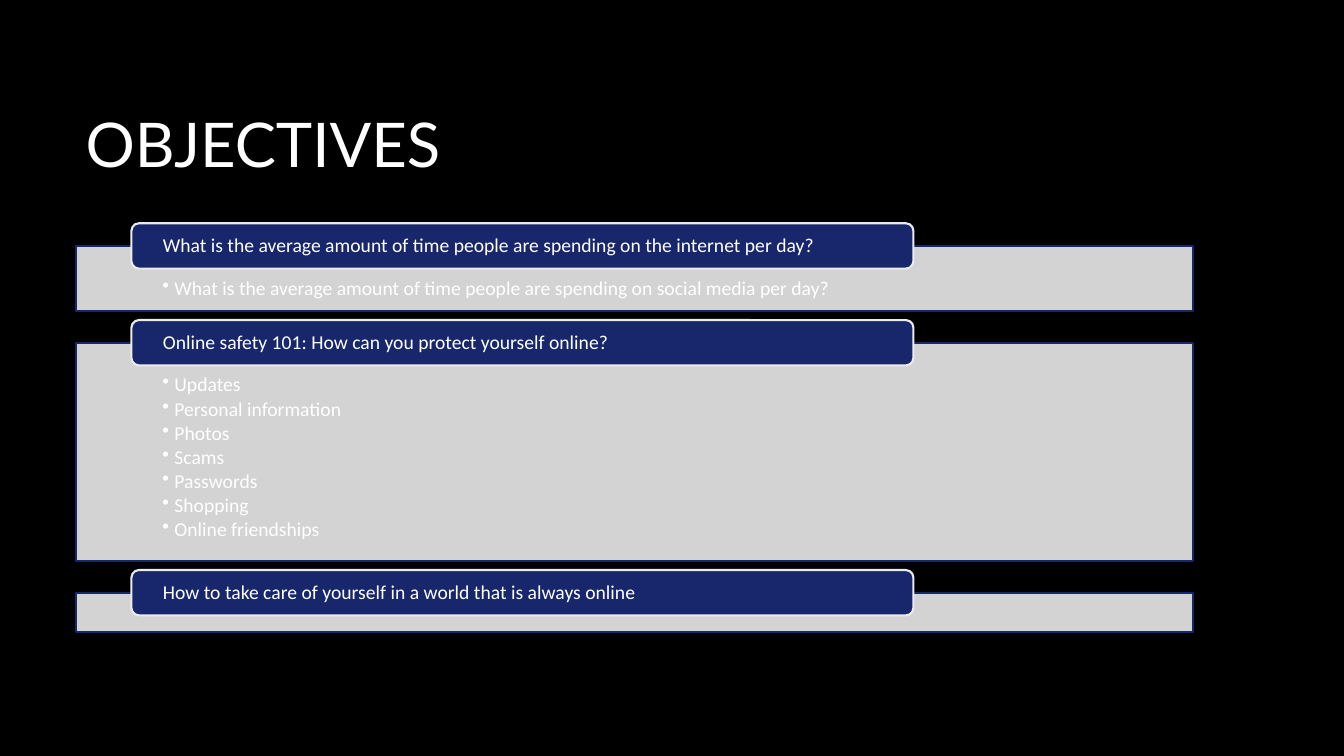
import pptx
import pptx.util
import pptx.dml.color
import pptx.enum.shapes
import pptx.enum.text
import pptx.oxml.ns
import lxml.etree

Inches = pptx.util.Inches
Pt = pptx.util.Pt
SHAPES = pptx.enum.shapes.MSO_SHAPE
ANCHORS = pptx.enum.text.MSO_ANCHOR
ALIGNMENTS = pptx.enum.text.PP_ALIGN
qn = pptx.oxml.ns.qn

COLORS = {"black": "000000", "white": "FFFFFF", "navy": "18276C", "light": "EBEBEB"}
SLIDE_WIDTH, SLIDE_HEIGHT = 13.33, 7.5
LEFT, WIDTH = 0.75, 11.08
LABEL_INDENT, LABEL_WIDTH, LABEL_HEIGHT = 0.05 * WIDTH, 0.7 * WIDTH, 0.45
LABEL_RISE = LABEL_HEIGHT / 2
FIRST_TOP, GAP = 2.44, 0.31

OBJECTIVES = [
    ("What is the average amount of time people are spending on the internet per day?", 0.65,
     ["What is the average amount of time people are spending on social media per day?"]),
    ("Online safety 101: How can you protect yourself online?", 2.17,
     ["Updates", "Personal information", "Photos", "Scams", "Passwords", "Shopping",
      "Online friendships"]),
    ("How to take care of yourself in a world that is always online", 0.39, []),
]


def add_box(kind, left, top, width, height, fill, line, margins, anchor):
    shape = slide.shapes.add_shape(kind, Inches(left), Inches(top), Inches(width), Inches(height))
    shape.shadow.inherit = False
    shape.fill.solid()
    shape.fill.fore_color.rgb = pptx.dml.color.RGBColor.from_string(COLORS[fill])
    shape.line.color.rgb = pptx.dml.color.RGBColor.from_string(COLORS[line])
    shape.line.width = Pt(1.5)
    frame = shape.text_frame
    frame.word_wrap = True
    frame.vertical_anchor = anchor
    frame.margin_left, frame.margin_top, frame.margin_right, frame.margin_bottom = map(Inches, margins)
    return shape


def write(paragraph, text, font_name, size):
    paragraph.text = text
    paragraph.alignment = ALIGNMENTS.LEFT
    paragraph.line_spacing = 0.9
    paragraph.font.name = font_name
    paragraph.font.size = Pt(size)
    paragraph.font.color.rgb = pptx.dml.color.RGBColor.from_string(COLORS["white"])


presentation = pptx.Presentation()
presentation.slide_width = Inches(SLIDE_WIDTH)
presentation.slide_height = Inches(SLIDE_HEIGHT)
slide = presentation.slides.add_slide(presentation.slide_layouts[6])
slide.background.fill.solid()
slide.background.fill.fore_color.rgb = pptx.dml.color.RGBColor.from_string(COLORS["black"])

title = slide.shapes.add_textbox(Inches(LEFT), Inches(0.67), Inches(WIDTH), Inches(1.59))
title.text_frame.word_wrap = True
title.text_frame.vertical_anchor = ANCHORS.MIDDLE
write(title.text_frame.paragraphs[0], "OBJECTIVES", "Lato", 44)

top = FIRST_TOP
for heading, height, points in OBJECTIVES:
    panel = add_box(SHAPES.RECTANGLE, LEFT, top, WIDTH, height, "light", "navy",
                    (0.86, 0.32, 0.86, 0.11), ANCHORS.TOP)
    fill_color = panel.fill._xPr.find(qn("a:solidFill"))[0]
    lxml.etree.SubElement(fill_color, qn("a:alpha"), val="90000")
    for number, point in enumerate(points):
        frame = panel.text_frame
        paragraph = frame.add_paragraph() if number else frame.paragraphs[0]
        properties = paragraph._p.get_or_add_pPr()
        properties.set("marL", str(Inches(0.12)))
        properties.set("indent", str(-Inches(0.12)))
        lxml.etree.SubElement(properties, qn("a:buChar"), char="•")
        write(paragraph, point, "Calibri", 14)
        paragraph.space_after = Pt(2.1)

    label = add_box(SHAPES.ROUNDED_RECTANGLE, LEFT + LABEL_INDENT, top - LABEL_RISE,
                    LABEL_WIDTH, LABEL_HEIGHT, "navy", "light", (0.29, 0, 0.29, 0), ANCHORS.MIDDLE)
    write(label.text_frame.paragraphs[0], heading, "Calibri", 14)
    top += height + GAP

presentation.save("out.pptx")
